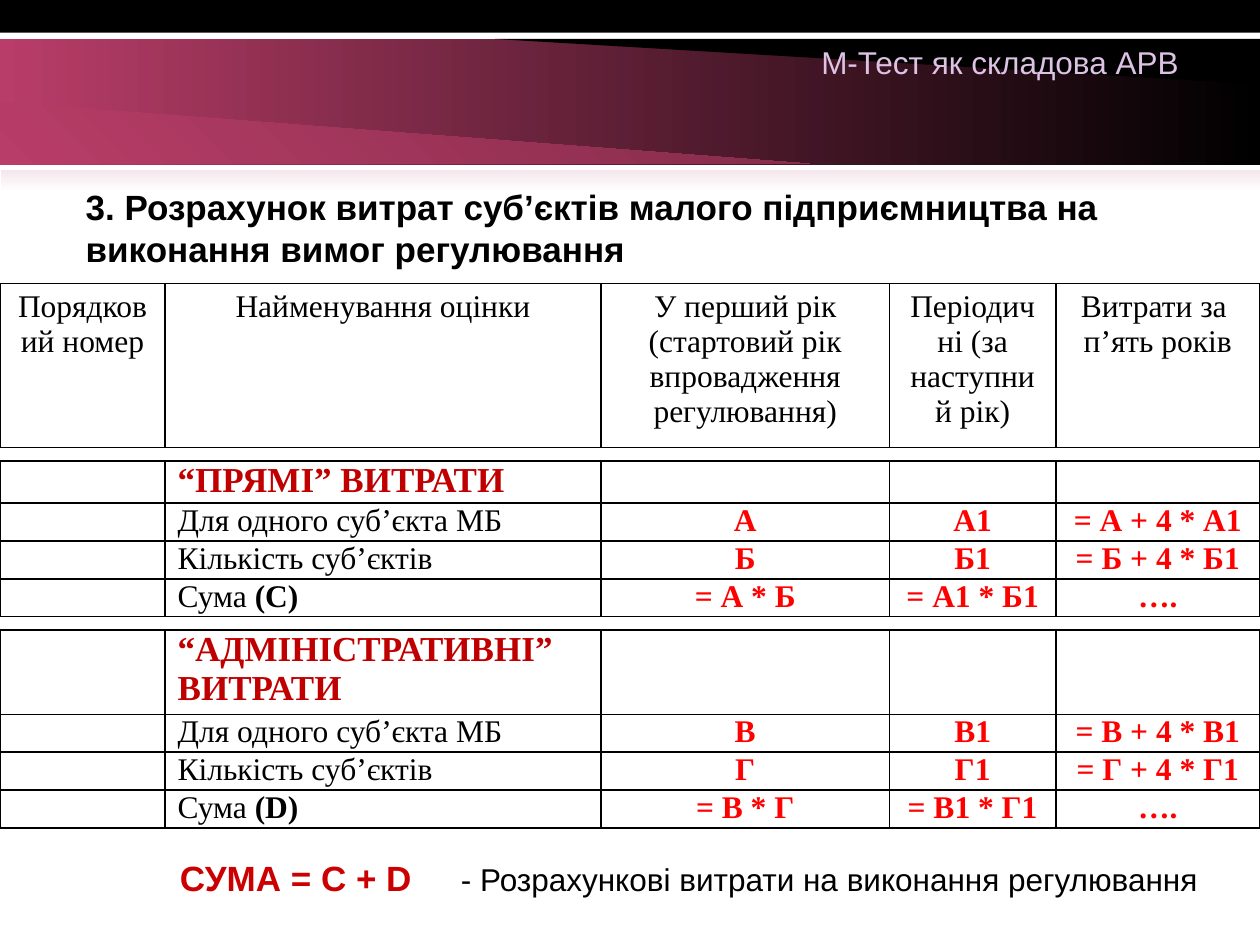
import pptx
import pptx.util
import pptx.dml.color
import pptx.enum.shapes
import pptx.enum.text
from lxml import etree
from pptx.util import Inches, Pt

COLORS = {
    "pink": "B83D68", "plum": "842C4A", "blush": "F4E7ED", "lilac": "DEC2E4",
    "black": "000000", "white": "FFFFFF",
    "heading": "C00000", "formula": "FF0000", "total": "CC0000",
}
COLUMN_WIDTHS = [1.31, 3.46, 2.29, 1.32, 1.62]
CENTER = pptx.enum.text.PP_ALIGN.CENTER
LEFT = pptx.enum.text.PP_ALIGN.LEFT
DRAWING = "http://schemas.openxmlformats.org/drawingml/2006/main"


def rgb(name):
    return pptx.dml.color.RGBColor.from_string(COLORS[name])


def set_font(font, name, size, color, bold=False):
    font.name, font.size, font.bold = name, Pt(size), bold
    font.color.rgb = rgb(color)


presentation = pptx.Presentation()
presentation.slide_width, presentation.slide_height = Inches(10), Inches(7.5)
slide = presentation.slides.add_slide(presentation.slide_layouts[5])
shapes = slide.shapes

# Banner: outline points (two corners make a rectangle), colours, gradient angle
banner = [
    ([(0, 0.31), (10.01, 1.31)], ["pink", "black"], 0),
    ([(9.82, 0.31), (3.93, 0.31), (10.01, 0.67), (10.01, 0.31)], ["black"], 0),
    ([(0.19, 1.3), (6.43, 1.3), (0, 0.81), (0, 1.3)], ["pink", "plum"], 45),
    ([(0, 0), (10, 0.26)], ["black"], 0),
    ([(0.01, 1.35), (10, 1.52)], ["blush", "white"], 270),
]
for points, fill_colors, angle in banner:
    corners = [(Inches(x), Inches(y)) for x, y in points]
    if len(corners) == 2:
        (left, top), (right, bottom) = corners
        shape = shapes.add_shape(pptx.enum.shapes.MSO_SHAPE.RECTANGLE,
                                 left, top, right - left, bottom - top)
    else:
        builder = shapes.build_freeform(*corners[0])
        builder.add_line_segments(corners[1:], close=True)
        shape = builder.convert_to_shape()
    shape.shadow.inherit = False
    shape.line.fill.background()
    if len(fill_colors) == 1:
        shape.fill.solid()
        shape.fill.fore_color.rgb = rgb(fill_colors[0])
    else:
        shape.fill.gradient()
        shape.fill.gradient_angle = angle
        for stop, color in zip(shape.fill.gradient_stops, fill_colors):
            stop.color.rgb = rgb(color)

topic = shapes.add_textbox(Inches(6.42), Inches(0.29), Inches(3.07), Inches(0.4))
topic.text_frame.word_wrap = False
topic.text_frame.text = "М-Тест як складова АРВ"
set_font(topic.text_frame.paragraphs[0].font, "Arial", 18, "lilac")

title = shapes.title
title.left, title.top = Inches(0.58), Inches(1.42)
title.width, title.height = Inches(8.83), Inches(0.77)
title.text_frame.text = ("3. Розрахунок витрат суб’єктів малого підприємництва "
                         "на виконання вимог регулювання")
title.text_frame.auto_size = pptx.enum.text.MSO_AUTO_SIZE.NONE
title.text_frame.vertical_anchor = pptx.enum.text.MSO_ANCHOR.MIDDLE
title.text_frame.paragraphs[0].alignment = LEFT
set_font(title.text_frame.paragraphs[0].font, "Arial", 20, "black", True)

# Tables: top, row heights, rows of text
header = ["Порядковий номер", "Найменування оцінки",
          "У перший рік (стартовий рік впровадження регулювання)",
          "Періодичні (за наступний рік)", "Витрати за \vп’ять років"]
tables = [(2.25, [1.3], [header])]
for top, heading_height, heading, cost, count, total in [
    (3.66, 0.33, "“ПРЯМІ” ВИТРАТИ", "А", "Б", "(C)"),
    (5, 0.67, "“АДМІНІСТРАТИВНІ” ВИТРАТИ", "В", "Г", "(D)"),
]:
    tables.append((top, [heading_height, 0.3, 0.3, 0.3], [
        ["", heading, "", "", ""],
        ["", "Для одного суб’єкта МБ", cost, f"{cost}1", f"= {cost} + 4 * {cost}1"],
        ["", "Кількість суб’єктів", count, f"{count}1", f"= {count} + 4 * {count}1"],
        ["", f"Сума {total}", f"= {cost} * {count}", f"= {cost}1 * {count}1", "…."],
    ]))

for top, heights, rows in tables:
    frame = shapes.add_table(len(rows), len(COLUMN_WIDTHS), 0, Inches(top),
                             Inches(10), Inches(sum(heights)))
    table = frame.table
    table.first_row = table.horz_banding = False
    for column, width in zip(table.columns, COLUMN_WIDTHS):
        column.width = Inches(width)
    is_header = rows[0] is header
    for row_index, texts in enumerate(rows):
        table.rows[row_index].height = Inches(heights[row_index])
        for column_index, text in enumerate(texts):
            cell = table.cell(row_index, column_index)
            cell.margin_top = cell.margin_bottom = Inches(0.05 if is_header else 0)
            paragraph = cell.text_frame.paragraphs[0]
            is_label = column_index == 1 and not is_header
            paragraph.alignment = LEFT if is_label else CENTER
            if is_header:
                style = (18, "black", False)
            elif is_label and row_index == 0:
                style = (20, "heading", True)
            elif is_label:
                style = (18, "black", False)
            else:
                style = (18, "formula", True)
            if text.startswith("Сума "):
                for part, bold in (("Сума ", False), (text[5:], True)):
                    run = paragraph.add_run()
                    run.text = part
                    set_font(run.font, "Times New Roman", 18, "black", bold)
            else:
                paragraph.text = text
                set_font(paragraph.font, "Times New Roman", *style)
            properties = cell._tc.get_or_add_tcPr()
            for side in ("lnL", "lnR", "lnT", "lnB"):
                border = etree.SubElement(properties, f"{{{DRAWING}}}{side}", w=str(Pt(1)))
                solid = etree.SubElement(border, f"{{{DRAWING}}}solidFill")
                etree.SubElement(solid, f"{{{DRAWING}}}srgbClr", val=COLORS["black"])
            cell.fill.background()

summary = shapes.add_textbox(Inches(1.33), Inches(6.75), Inches(8.42), Inches(0.44))
summary.text_frame.word_wrap = True
paragraph = summary.text_frame.paragraphs[0]
tab_list = etree.SubElement(paragraph._p.get_or_add_pPr(), f"{{{DRAWING}}}tabLst")
etree.SubElement(tab_list, f"{{{DRAWING}}}tab", pos=str(Inches(2.23)), algn="l")
for text, size, color, bold in [
    ("СУМА = C + D\t", 20, "total", True),
    ("- Розрахункові витрати на виконання регулювання", 18, "black", False),
]:
    run = paragraph.add_run()
    run.text = text
    set_font(run.font, "Arial", size, color, bold)

presentation.save("out.pptx")
